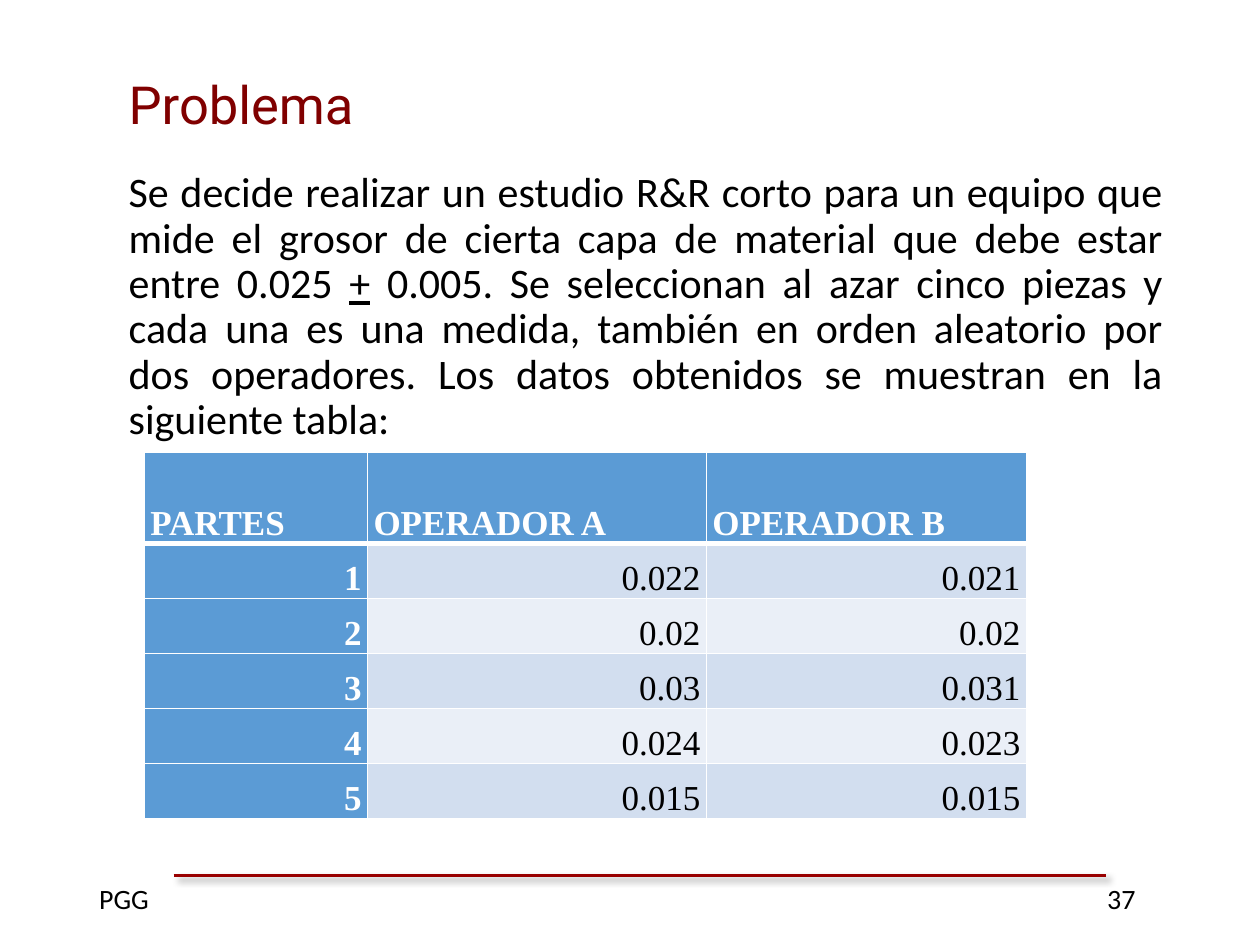
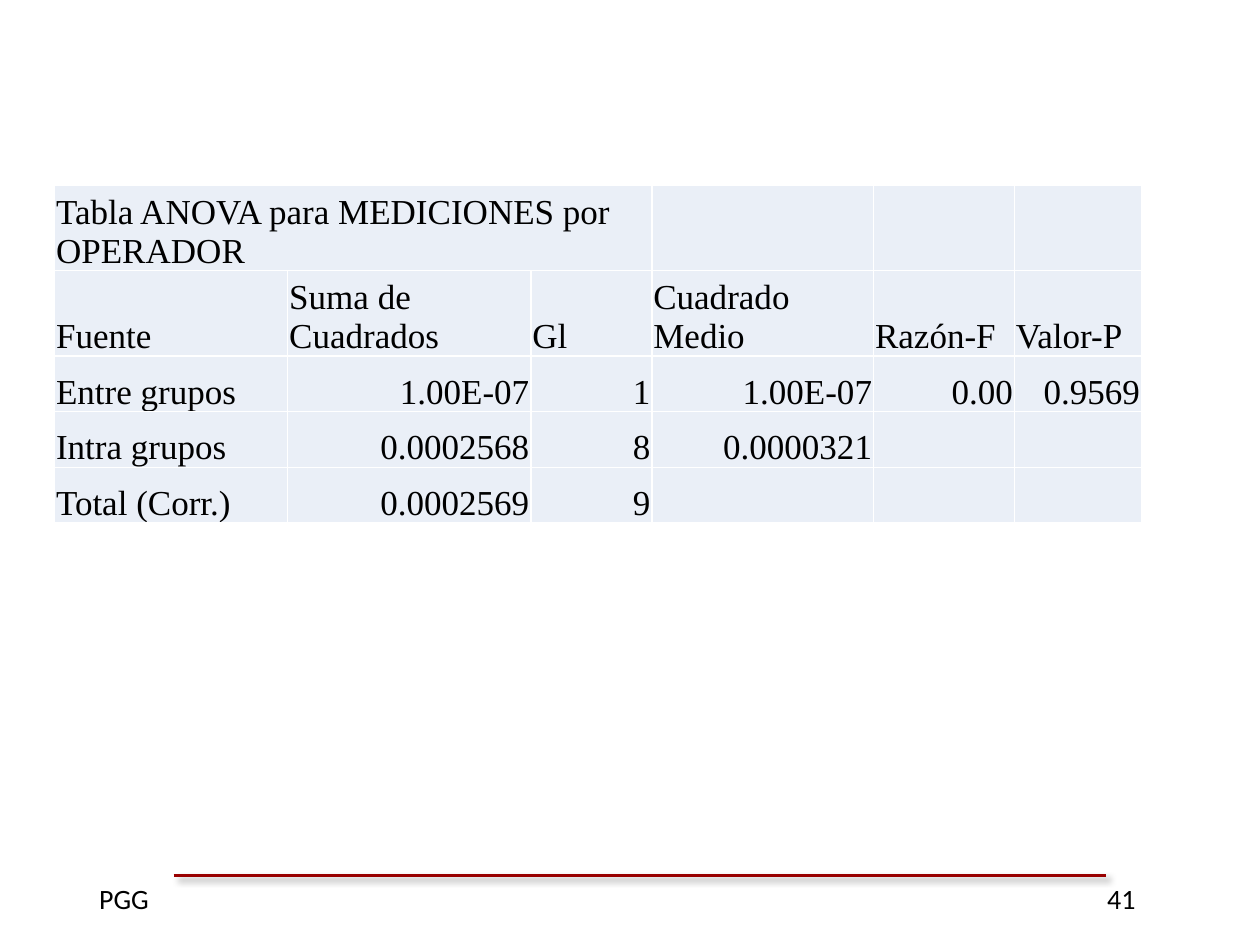
from lxml.etree import SubElement
from pptx import Presentation
from pptx.dml.color import RGBColor
from pptx.enum.shapes import MSO_CONNECTOR
from pptx.enum.text import MSO_ANCHOR, MSO_AUTO_SIZE, PP_ALIGN
from pptx.oxml.ns import qn
from pptx.util import Cm, Pt

LEFT, RIGHT, JUSTIFY = PP_ALIGN.LEFT, PP_ALIGN.RIGHT, PP_ALIGN.JUSTIFY
TOP, BOTTOM = MSO_ANCHOR.TOP, MSO_ANCHOR.BOTTOM
STRAIGHT = MSO_CONNECTOR.STRAIGHT
NO_AUTOFIT = MSO_AUTO_SIZE.NONE

BLACK = RGBColor(0x00, 0x00, 0x00)
WHITE = RGBColor(0xFF, 0xFF, 0xFF)
MAROON = RGBColor(0x80, 0x00, 0x00)
RULE_RED = RGBColor(0x99, 0x00, 0x00)
HEADER_BLUE = RGBColor(0x5B, 0x9B, 0xD5)
BAND_DARK = RGBColor(0xD2, 0xDE, 0xEF)
BAND_LIGHT = RGBColor(0xEA, 0xEF, 0xF7)

TITLE_FONT, BODY_FONT, TABLE_FONT = "Roboto", "Calibri", "Times New Roman"
TITLE_AND_BODY, BLANK = 1, 6
AUTHOR = "PGG"

PROBLEM_TITLE = "Problema"
PROBLEM_TEXT = [
    ("Se decide realizar un estudio R&R corto para un equipo que mide el grosor "
     "de cierta capa de material que debe estar entre 0.025 ", False),
    ("+", True),
    (" 0.005. Se seleccionan al azar cinco piezas y cada una es una medida, "
     "también en orden aleatorio por dos operadores. Los datos obtenidos se "
     "muestran en la siguiente tabla:", False),
]
MEASUREMENTS = [
    ("PARTES", "OPERADOR A", "OPERADOR B"),
    ("1", "0.022", "0.021"),
    ("2", "0.02", "0.02"),
    ("3", "0.03", "0.031"),
    ("4", "0.024", "0.023"),
    ("5", "0.015", "0.015"),
]
ANOVA = [
    ("Tabla ANOVA para MEDICIONES por OPERADOR", "", "", "", "", ""),
    ("Fuente", "Suma de Cuadrados", "Gl", "Cuadrado Medio", "Razón-F", "Valor-P"),
    ("Entre grupos", "1.00E-07", "1", "1.00E-07", "0.00", "0.9569"),
    ("Intra grupos", "0.0002568", "8", "0.0000321", "", ""),
    ("Total (Corr.)", "0.0002569", "9", "", "", ""),
]


def write(frame, text, *, font, size, color=BLACK, bold=False, align=LEFT,
          spacing=1.0, anchor=TOP):
    frame.word_wrap = True
    frame.vertical_anchor = anchor
    paragraph = frame.paragraphs[0]
    paragraph.alignment = align
    paragraph.line_spacing = spacing
    pieces = [(text, False)] if isinstance(text, str) else text
    for words, underlined in pieces:
        run = paragraph.add_run()
        run.text = words
        run.font.name = font
        run.font.size = Pt(size)
        run.font.color.rgb = color
        run.font.bold = bold
        run.font.underline = underlined
    return paragraph


def place(part, left, top, width, height):
    part.left, part.top = Cm(left), Cm(top)
    part.width, part.height = Cm(width), Cm(height)


def add_footer(slide, number):
    footer = slide.shapes.add_textbox(Cm(1.75), Cm(17.65), Cm(21.9), Cm(0.94))
    line = write(footer.text_frame, f"{AUTHOR}\t{number}", font=BODY_FONT, size=16)
    stops = SubElement(line._p.get_or_add_pPr(), qn("a:tabLst"))
    SubElement(stops, qn("a:tab"), pos=str(Cm(20.32)), algn="l")

    rule = slide.shapes.add_connector(
        STRAIGHT, Cm(3.5), Cm(17.65), Cm(22.3), Cm(17.65))
    rule.line.color.rgb = RULE_RED
    rule.line.width = Pt(1.5)
    effects = SubElement(rule._element.spPr, qn("a:effectLst"))
    shadow = SubElement(effects, qn("a:outerShdw"), blurRad=str(Pt(4)),
                        dist=str(Pt(3)), dir="2700000", rotWithShape="0")
    tint = SubElement(shadow, qn("a:srgbClr"), val=str(BLACK))
    SubElement(tint, qn("a:alpha"), val="40000")


def set_borders(cell, top, bottom):
    properties = cell._tc.get_or_add_tcPr()
    for side, width in (("lnL", 1), ("lnR", 1), ("lnT", top), ("lnB", bottom)):
        border = SubElement(properties, qn(f"a:{side}"), w=str(Pt(width)))
        fill = SubElement(border, qn("a:solidFill"))
        SubElement(fill, qn("a:srgbClr"), val=str(WHITE))


def add_grid(slide, rows, left, top, widths, heights, margins, look,
             spacing=1.0, header_rule=1):
    grid = slide.shapes.add_table(
        len(rows), len(widths), Cm(left), Cm(top),
        Cm(sum(widths)), Cm(sum(heights))).table
    grid.first_row = grid.horz_banding = False
    for column, width in zip(grid.columns, widths):
        column.width = Cm(width)
    for row, height in zip(grid.rows, heights):
        row.height = Cm(height)
    side, upper = margins
    for r, values in enumerate(rows):
        for c, value in enumerate(values):
            cell = grid.cell(r, c)
            fill, color, bold, align = look(r, c)
            set_borders(cell, header_rule if r == 1 else 1,
                        header_rule if r == 0 else 1)
            cell.fill.solid()
            cell.fill.fore_color.rgb = fill
            cell.margin_left = cell.margin_right = Cm(side)
            cell.margin_top, cell.margin_bottom = Cm(upper), 0
            cell.vertical_anchor = BOTTOM
            if value:
                write(cell.text_frame, value, font=TABLE_FONT, size=20, color=color,
                      bold=bold, align=align, spacing=spacing, anchor=BOTTOM)
    return grid


def measurement_look(r, c):
    align = RIGHT if r else LEFT
    if r == 0 or c == 0:
        return HEADER_BLUE, WHITE, True, align
    return (BAND_DARK if r % 2 else BAND_LIGHT), BLACK, False, align


def anova_look(r, c):
    return BAND_LIGHT, BLACK, False, RIGHT if r > 1 and c else LEFT


def build_problem(deck):
    slide = deck.slides.add_slide(deck.slide_layouts[TITLE_AND_BODY])
    add_footer(slide, 37)
    title, body = slide.placeholders
    place(title, 2.34, 1.32, 23, 1.55)
    place(body, 1.7, 3.33, 22, 6)
    title.text_frame.auto_size = body.text_frame.auto_size = NO_AUTOFIT
    write(title.text_frame, PROBLEM_TITLE, font=TITLE_FONT, size=30, color=MAROON)
    statement = write(body.text_frame, PROBLEM_TEXT, font=BODY_FONT, size=24,
                      align=JUSTIFY, spacing=0.9)
    statement.space_before = Pt(10)
    layout = statement._p.get_or_add_pPr()
    layout.set("marL", str(Cm(0.64)))
    layout.set("indent", "0")
    SubElement(layout, qn("a:buNone"))
    add_grid(slide, MEASUREMENTS, 2.91, 9.12, [4.5, 6.83, 6.45],
             [1.83] + [1.11] * 5, (0.12, 0), measurement_look,
             spacing=1.15, header_rule=3)


def build_anova(deck):
    slide = deck.slides.add_slide(deck.slide_layouts[BLANK])
    add_footer(slide, 41)
    grid = add_grid(slide, ANOVA, 1.1, 3.73, [4.7, 4.9, 2.44, 4.47, 2.84, 2.56],
                    [1.71] * 2 + [1.12] * 3, (0.03, 0.03), anova_look)
    grid.cell(0, 0).merge(grid.cell(0, 2))


def main():
    deck = Presentation()
    deck.slide_width, deck.slide_height = Cm(25.4), Cm(19.05)
    build_problem(deck)
    build_anova(deck)
    deck.save("out.pptx")


if __name__ == "__main__":
    main()
